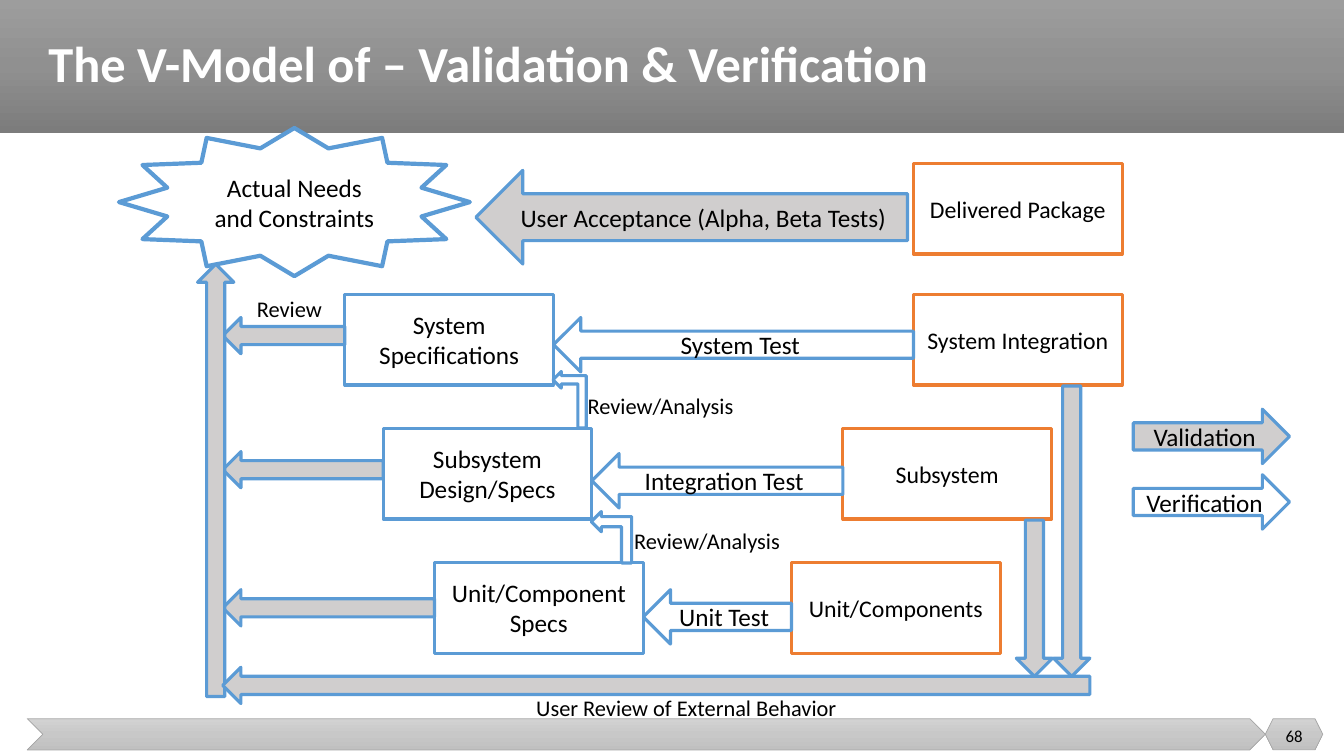
from copy import deepcopy

from pptx import Presentation
from pptx.dml.color import RGBColor
from pptx.enum.shapes import MSO_SHAPE as Shape
from pptx.enum.text import MSO_ANCHOR as Anchor, MSO_AUTO_SIZE as AutoSize, PP_ALIGN as Align
from pptx.oxml.ns import qn
from pptx.util import Inches, Pt

WIDTH, HEIGHT = 13.33, 7.5
FONT = "Calibri"
BLACK, WHITE, GREY, BLUE, ORANGE = "000000", "FFFFFF", "D0CECE", "5B9BD5", "ED7D31"
HEADER_STOPS = ["9D9D9D", "909090", "7C7C7C"]
FOOTER_STOPS = ["D2D2D2", "C8C8C8", "C0C0C0"]

TITLE = "The V-Model of – Validation & Verification"
PAGE_NUMBER = "68"
LEVELS = [
    ("System Specifications", 3.42, "System Test", "System Integration", 9.06, 0.23, 0.23),
    ("Subsystem Design/Specs", 3.8, "Integration Test", "Subsystem", 8.36, 0.23, 0.25),
    ("Unit/Component Specs", 4.31, "Unit Test", "Unit/Components", 7.85, 0.27, 0.27),
]
LEGEND = [("Validation", GREY), ("Verification", WHITE)]
CAPTIONS = [
    ("User Review of External Behavior", 5.22, 6.84, 4.55),
    ("Review/Analysis", 6.19, 5.18, 4.55),
    ("Review/Analysis", 5.73, 3.84, 1.94),
    ("Review", 2.45, 2.88, 1.94),
]
BENT_ARROWS = [(5.81, 5.13, 0.51, 0.4), (5.37, 3.8, 0.56, 0.33)]

BOX_WIDTH, BOX_HEIGHT = 2.07, 0.9
FIRST_ROW, ROW_STEP = 2.92, 1.33
SPINE, THIN, THICK = 2.21, 0.36, 0.54
REVIEW_TOP, REVIEW_RIGHT = 6.62, 10.81
DROPS = [(10.08, 5.16), (10.45, 3.83)]

presentation = Presentation()
presentation.slide_width = Inches(WIDTH)
presentation.slide_height = Inches(HEIGHT)
slide = presentation.slides.add_slide(presentation.slide_layouts[5])


def color(value):
    return RGBColor.from_string(value)


def write(shape, text, size=18, ink=BLACK, bold=False, align=Align.CENTER, anchor=Anchor.MIDDLE):
    frame = shape.text_frame
    frame.word_wrap = True
    frame.vertical_anchor = anchor
    paragraph = frame.paragraphs[0]
    paragraph.alignment = align
    run = paragraph.add_run()
    run.text = text
    run.font.name = FONT
    run.font.size = Pt(size)
    run.font.bold = bold
    run.font.color.rgb = color(ink)
    return paragraph


def place(kind, left, top, width, height, text="", fill=WHITE, line=BLUE, weight=2.25, size=18):
    shape = slide.shapes.add_shape(kind, *map(Inches, (left, top, width, height)))
    shape.shadow.inherit = False
    if fill:
        shape.fill.solid()
        shape.fill.fore_color.rgb = color(fill)
    if line:
        shape.line.color.rgb = color(line)
        shape.line.width = Pt(weight)
    else:
        shape.line.fill.background()
    if text:
        write(shape, text, size=size)
    return shape


def shade(shape, stops):
    shape.fill.gradient()
    shape.fill.gradient_angle = 270
    first = next(shape.element.iter(qn("a:gs")))
    first.addnext(deepcopy(first))
    for index, (stop, value) in enumerate(zip(shape.fill.gradient_stops, stops)):
        stop.color.rgb = color(value)
        stop.position = index / 2


def label(text, left, top, width, height=0.37, **form):
    box = slide.shapes.add_textbox(*map(Inches, (left, top, width, height)))
    write(box, text, **form)


title = slide.shapes.title
title.left, title.top, title.width, title.height = map(Inches, (0.38, 0, 12.74, 1.32))
title.text_frame.auto_size = AutoSize.NONE
write(title, TITLE, size=36, ink=WHITE, bold=True, align=Align.LEFT).line_spacing = 0.9

header = place(Shape.RECTANGLE, 0, 0, WIDTH, 1.32, fill=None, line=None)
shade(header, HEADER_STOPS)
title.element.addprevious(header.element)
for kind, left, width in [(Shape.CHEVRON, 0.27, 12.28), (Shape.HEXAGON, 12.55, 0.57)]:
    shade(place(kind, left, 7.13, width, 0.31, fill=None, line="A5A5A5", weight=0.5), FOOTER_STOPS)
label(PAGE_NUMBER, 12.55, 7.1, 0.57, 0.4, size=12)

place(Shape.STAR_12_POINT, 1.18, 1.27, 3.48, 1.47, "Actual Needs and Constraints", weight=3)
place(Shape.RECTANGLE, 9.06, 1.62, BOX_WIDTH, BOX_HEIGHT, "Delivered Package", line=ORANGE, size=17)
place(Shape.LEFT_ARROW, 4.72, 1.69, 4.28, 0.93, "User Acceptance (Alpha, Beta Tests)", fill=GREY)

for row, (spec, left, test, part, part_left, review_drop, test_drop) in enumerate(LEVELS):
    top = FIRST_ROW + row * ROW_STEP
    right = left + BOX_WIDTH
    place(Shape.RECTANGLE, left, top, BOX_WIDTH, BOX_HEIGHT, spec)
    place(Shape.RECTANGLE, part_left, top, BOX_WIDTH, BOX_HEIGHT, part, line=ORANGE, size=17)
    place(Shape.LEFT_ARROW, SPINE, top + review_drop, left - SPINE, THIN, fill=GREY)
    place(Shape.LEFT_ARROW, right, top + test_drop, part_left - right, THICK, test)

place(Shape.UP_ARROW, 1.96, 2.62, THIN, 4.29, fill=GREY)
place(Shape.LEFT_ARROW, SPINE, REVIEW_TOP, REVIEW_RIGHT - SPINE, THIN, fill=GREY)
for left, top in DROPS:
    place(Shape.DOWN_ARROW, left, top, THIN, 6.71 - top, fill=GREY)

for index, (text, fill) in enumerate(LEGEND):
    place(Shape.RIGHT_ARROW, 11.24, 4.06 + index * 0.65, 1.55, THICK, text, fill=fill)

for frame in BENT_ARROWS:
    place(Shape.BENT_UP_ARROW, *frame).rotation = 270

for text, left, top, width in CAPTIONS:
    label(text, left, top, width, size=16, align=Align.LEFT, anchor=Anchor.TOP)

presentation.save("out.pptx")
